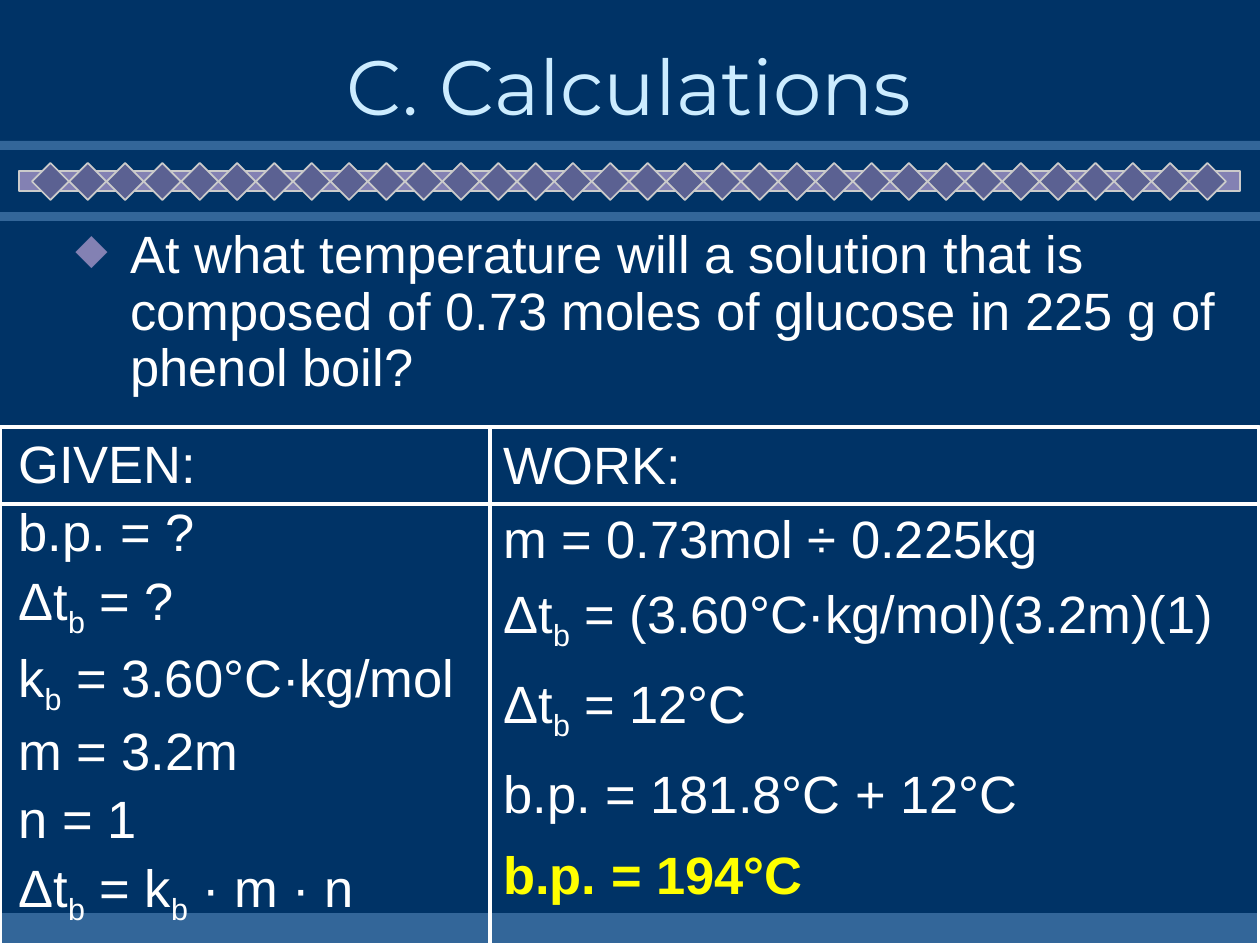
"""Build the boiling point calculation slide."""
import dataclasses

import lxml.etree
import pptx
import pptx.dml.color
import pptx.enum.shapes
import pptx.enum.text
import pptx.oxml
import pptx.oxml.ns
import pptx.util

SCALE = 914400 / 126
SHAPE = pptx.enum.shapes.MSO_SHAPE
ALIGN = pptx.enum.text.PP_ALIGN
ANCHOR = pptx.enum.text.MSO_ANCHOR


@dataclasses.dataclass(frozen=True)
class Theme:
    """Colours, fonts and type sizes of the slide."""
    background: str = "003366"
    stripe: str = "336699"
    bar: str = "8381B3"
    diamond: str = "5B6192"
    edge: str = "CBCBCB"
    title: str = "CCECFF"
    text: str = "FFFFFF"
    answer: str = "FFFF00"
    shadow: str = "000000"
    title_font: str = "Montserrat"
    text_font: str = "Arial"
    title_size: int = 44
    text_size: int = 30
    edge_width: float = 1
    rule_width: float = 2.25


THEME = Theme()


def px(length):
    """Turn px into EMU."""
    return round(length * SCALE)


def rgb(value):
    """Turn a hex string into a colour."""
    return pptx.dml.color.RGBColor.from_string(value)


def add_element(parent, tag, **attributes):
    """Append a DrawingML element and return it."""
    name = pptx.oxml.ns.qn(f"a:{tag}")
    return lxml.etree.SubElement(parent, name, attributes)


def set_line(line, color, width):
    """Give an outline its colour and width."""
    line.color.rgb = rgb(color)
    line.width = pptx.util.Pt(width)


def add_block(page, kind, bounds, fill=None, line=None, width=THEME.edge_width):
    """Add a preset shape with optional fill and outline."""
    block = page.shapes.add_shape(kind, *map(px, bounds))
    block.shadow.inherit = False
    if fill:
        block.fill.solid()
        block.fill.fore_color.rgb = rgb(fill)
    else:
        block.fill.background()
    if line:
        set_line(block.line, line, width)
    else:
        block.line.fill.background()


def add_rule(page, start, end):
    """Add a straight white rule."""
    ends = map(px, (*start, *end))
    rule = page.shapes.add_connector(pptx.enum.shapes.MSO_CONNECTOR.STRAIGHT, *ends)
    set_line(rule.line, THEME.text, THEME.rule_width)
    add_element(rule._element.spPr, "effectLst")


def add_box(page, bounds, anchor=ANCHOR.TOP):
    """Add a wrapping text box and return its text frame."""
    frame = page.shapes.add_textbox(*map(px, bounds)).text_frame
    frame.word_wrap = True
    frame.vertical_anchor = anchor
    return frame


def add_span(para, text, color=THEME.text, subscript=False, **formats):
    """Add a run of text and return it."""
    span = para.add_run()
    span.text = text
    values = {"name": THEME.text_font, "size": pptx.util.Pt(THEME.text_size), **formats}
    for name, value in values.items():
        setattr(span.font, name, value)
    span.font.color.rgb = rgb(color)
    if subscript:
        span._r.get_or_add_rPr().set("baseline", "-25000")
    return span


def add_formula(para, text, **formats):
    """Add text in which an underscore lowers the next letter."""
    first, *rest = text.split("_")
    add_span(para, first, **formats)
    for part in rest:
        add_span(para, part[0], subscript=True, **formats)
        add_span(para, part[1:], **formats)


def add_steps(page, bounds, steps):
    """Add a box of formulas, each with its percent space before and formats."""
    frame = add_box(page, bounds)
    for index, (text, space, formats) in enumerate(steps):
        para = frame.add_paragraph() if index else frame.paragraphs[0]
        before = add_element(para._p.get_or_add_pPr(), "spcBef")
        add_element(before, "spcPct", val=str(space * 1000))
        add_formula(para, text, **formats)


def add_title(page, text):
    """Add the centred title with its text shadow."""
    para = add_box(page, (94, 32, 1071, 105), ANCHOR.MIDDLE).paragraphs[0]
    para.alignment = ALIGN.CENTER
    span = add_span(para, text, THEME.title, name=THEME.title_font,
                    size=pptx.util.Pt(THEME.title_size))
    properties = span._r.get_or_add_rPr()
    effects = add_element(properties, "effectLst")
    shadow = add_element(effects, "outerShdw", dist=str(px(5)), dir="2700000")
    add_element(shadow, "srgbClr", val=THEME.shadow)
    properties.find(pptx.oxml.ns.qn("a:solidFill")).addnext(effects)


def add_question(page, text):
    """Add the question with its diamond bullet."""
    para = add_box(page, (63, 222, 1166, 126)).paragraphs[0]
    para.line_spacing = 0.9
    properties = para._p.get_or_add_pPr()
    for name, value in {"marL": px(55), "indent": -px(55)}.items():
        properties.set(name, str(value))
    add_element(add_element(properties, "buClr"), "srgbClr", val=THEME.bar)
    add_element(properties, "buSzPct", val="80000")
    add_element(properties, "buChar", char="◆")
    add_span(para, text)


def add_band(page, count=32, first=32, last=1189):
    """Add the stripes and the evenly spaced chain of diamonds."""
    for top, height in ((141, 9), (212, 9), (913, 32)):
        add_block(page, SHAPE.RECTANGLE, (0, top, 1260, height), THEME.stripe)
    add_block(page, SHAPE.RECTANGLE, (19, 171, 1221, 20), THEME.bar, THEME.edge)
    pitch = (last - first) / (count - 1)
    for index in range(count):
        bounds = (first + index * pitch, 163, 37, 37)
        add_block(page, SHAPE.DIAMOND, bounds, THEME.diamond, THEME.edge)


def main():
    """Build and save the deck."""
    deck = pptx.Presentation()
    deck.slide_width, deck.slide_height = px(1260), px(945)
    page = deck.slides.add_slide(deck.slide_layouts[6])
    page.background.fill.solid()
    page.background.fill.fore_color.rgb = rgb(THEME.background)

    add_band(page)
    add_title(page, "C. Calculations")
    add_question(page, "At what temperature will a solution that is composed of "
                       "0.73 moles of glucose in 225 g of phenol boil?")

    add_block(page, SHAPE.RECTANGLE, (0, 427, 1259, 518),
              line=THEME.text, width=THEME.rule_width)
    add_rule(page, (490, 427), (490, 945))
    add_rule(page, (0, 504), (1260, 504))

    given = ("GIVEN:", "b.p. = ?", "Δt_b = ?", "k_b = 3.60°C·kg/mol")
    add_steps(page, (6, 425, 520, 345), [(text, 10, {}) for text in given])
    factors = ("m = 3.2m", "n = 1", "Δt_b = k_b · m · n")
    add_steps(page, (6, 712, 484, 91), [(text, 10, {}) for text in factors])
    work = ("WORK:", "m = 0.73mol ÷ 0.225kg")
    add_steps(page, (491, 426, 769, 165), [(text, 20, {}) for text in work])
    add_steps(page, (491, 575, 769, 307), [
        ("Δt_b = (3.60°C·kg/mol)(3.2m)(1)", 40, {}),
        ("Δt_b = 12°C", 35, {}),
        ("b.p. = 181.8°C + 12°C", 35, {}),
        ("b.p. = 194°C", 35, {"color": THEME.answer, "bold": True}),
    ])
    deck.save("out.pptx")


if __name__ == "__main__":
    main()
